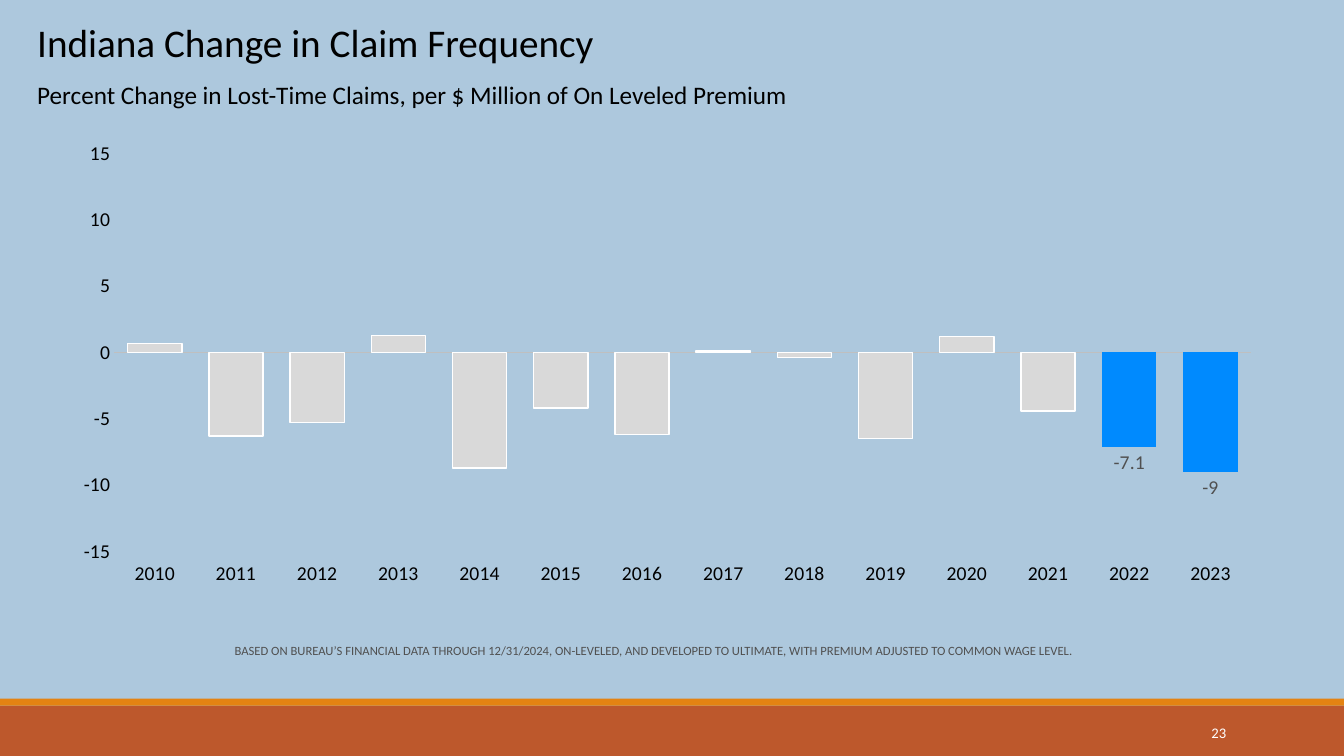
import pptx
import pptx.chart.data
import pptx.dml.color
import pptx.enum.chart
import pptx.enum.shapes
import pptx.enum.text
import pptx.oxml
import pptx.util

Pt = pptx.util.Pt
Align = pptx.enum.text.PP_ALIGN
Anchor = pptx.enum.text.MSO_ANCHOR


def color(hex_string):
    return pptx.dml.color.RGBColor.from_string(hex_string)


def add_text(frame, text, size, fill="000000", align=Align.LEFT, before=0, new=False):
    frame.word_wrap = True
    paragraph = frame.add_paragraph() if new else frame.paragraphs[0]
    paragraph.alignment = align
    if before:
        paragraph.space_before = Pt(before)
    run = paragraph.add_run()
    run.text = text
    run.font.name = "Calibri"
    run.font.size = Pt(size)
    run.font.color.rgb = color(fill)


presentation = pptx.Presentation()
presentation.slide_width, presentation.slide_height = Pt(960), Pt(540)
slide = presentation.slides.add_slide(presentation.slide_layouts[6])
slide.background.fill.solid()
slide.background.fill.fore_color.rgb = color("ADC8DD")

# Footer bands
for top, height, fill in ((504, 36, "BD582C"), (499, 5, "E48312")):
    band = slide.shapes.add_shape(
        pptx.enum.shapes.MSO_SHAPE.RECTANGLE, 0, Pt(top), Pt(960), Pt(height))
    band.shadow.inherit = False
    band.fill.solid()
    band.fill.fore_color.rgb = color(fill)
    band.line.fill.background()

# Slide number
number = slide.shapes.add_textbox(Pt(780), Pt(508.5), Pt(103), Pt(29)).text_frame
number.vertical_anchor = Anchor.MIDDLE
add_text(number, "23", 10.5, "FFFFFF", Align.RIGHT)

# Title and subtitle
title = slide.shapes.add_textbox(Pt(19.5), Pt(9.5), Pt(762), Pt(73)).text_frame
add_text(title, "Indiana Change in Claim Frequency", 28)
add_text(title, "Percent Change in Lost-Time Claims, per $ Million of On Leveled Premium",
         18, before=10, new=True)

# Source note
note = slide.shapes.add_textbox(Pt(49), Pt(451.5), Pt(835), Pt(26)).text_frame
note.vertical_anchor = Anchor.MIDDLE
add_text(note, "BASED ON BUREAU’S FINANCIAL DATA THROUGH 12/31/2024, ON-LEVELED, AND DEVELOPED "
         "TO ULTIMATE, WITH PREMIUM ADJUSTED TO COMMON WAGE LEVEL.", 9, "505050", Align.CENTER)

# Chart data: earlier years, highlighted years, and a clear series carrying the labels
earlier = [0.7, -6.3, -5.3, 1.3, -8.7, -4.2, -6.2, 0.1, -0.4, -6.5, 1.2, -4.4]
latest = [-7.1, -9]
highlighted = [None] * len(earlier) + latest
data = pptx.chart.data.CategoryChartData()
data.categories = [str(year) for year in range(2010, 2024)]
data.add_series("Series 1", earlier + [None] * len(latest))
data.add_series("Series 2", highlighted)
data.add_series("Series 3", highlighted)

chart = slide.shapes.add_chart(
    pptx.enum.chart.XL_CHART_TYPE.COLUMN_STACKED,
    Pt(47), Pt(100), Pt(864), Pt(323), data).chart
chart.has_legend = False
chart.has_title = False
chart.font.name = "Calibri"
chart.font.size = Pt(14)
chart.font.color.rgb = color("A6A6A6")

# Columns
plot = chart.plots[0]
plot.gap_width = 50
plot.overlap = 100
plot.vary_by_categories = False
for series, fill in zip(plot.series, ("D9D9D9", "008AFE", None)):
    series.invert_if_negative = False
    series.format.line.fill.background()
    if fill:
        series.format.fill.solid()
        series.format.fill.fore_color.rgb = color(fill)
    else:
        series.format.fill.background()
outline = plot.series[0].format.line
outline.color.rgb = color("FFFFFF")
outline.width = Pt(1)

labels = plot.series[2].data_labels
labels.show_value = True
labels.position = pptx.enum.chart.XL_LABEL_POSITION.INSIDE_BASE
labels.font.name = "Calibri"
labels.font.size = Pt(14)
labels.font.color.rgb = color("505050")

# Axes
for axis in (chart.category_axis, chart.value_axis):
    axis.has_major_gridlines = False
    axis.major_tick_mark = pptx.enum.chart.XL_TICK_MARK.NONE
    axis.minor_tick_mark = pptx.enum.chart.XL_TICK_MARK.NONE
    axis.tick_labels.font.name = "Calibri"
    axis.tick_labels.font.size = Pt(14)
    axis.tick_labels.font.color.rgb = color("000000")
chart.category_axis.tick_label_position = pptx.enum.chart.XL_TICK_LABEL_POSITION.LOW
chart.category_axis.format.line.color.rgb = color("BFBFBF")
chart.category_axis.format.line.width = Pt(1)
chart.value_axis.format.line.fill.background()
chart.value_axis.minimum_scale = -15
chart.value_axis.maximum_scale = 15
chart.value_axis.major_unit = 5
chart.value_axis.tick_labels.number_format = "#,##0"
chart.value_axis.tick_labels.number_format_is_linked = False

# Fixed inner plot area
plot_area = chart._chartSpace.chart.plotArea
for old_layout in plot_area.xpath("c:layout"):
    plot_area.remove(old_layout)
places = "".join(f'<c:{tag} val="{value}"/>' for tag, value in (
    ("layoutTarget", "inner"), ("xMode", "edge"), ("yMode", "edge"),
    ("x", 0.04), ("y", 0.03), ("w", 0.94), ("h", 0.88)))
plot_area.insert(0, pptx.oxml.parse_xml(
    '<c:layout xmlns:c="http://schemas.openxmlformats.org/drawingml/2006/chart">'
    f"<c:manualLayout>{places}</c:manualLayout></c:layout>"))

presentation.save("out.pptx")
